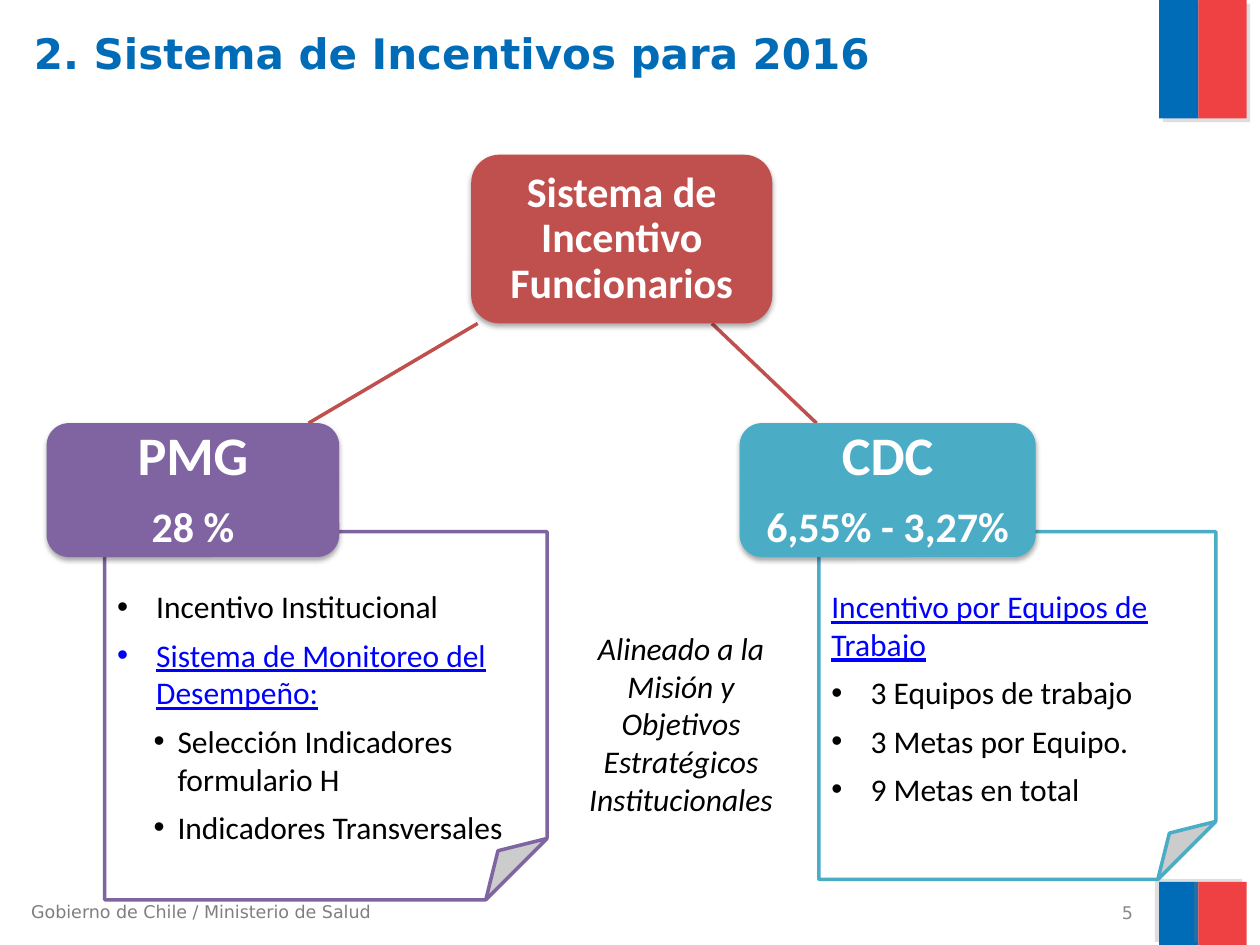
from dataclasses import dataclass

from lxml import etree
from pptx import Presentation
from pptx import util as u
from pptx.dml.color import RGBColor
from pptx.enum import shapes, text
from pptx.oxml.ns import qn


@dataclass(frozen=True)
class Theme:
    blue: str = "006CB7"
    red: str = "EF4144"
    brick: str = "C0504D"
    purple: str = "8064A2"
    teal: str = "4BACC6"
    link: str = "0000FF"
    black: str = "000000"
    white: str = "FFFFFF"
    footer: str = "7F7F7F"
    number: str = "898989"
    flag_shadow: str = "808080"
    heading_font: str = "DejaVu Sans"
    body_font: str = "Calibri"
    title_size: int = 24
    acronym_size: int = 31
    box_size: int = 24
    body_size: int = 18
    small_size: int = 10


@dataclass(frozen=True)
class Item:
    words: str
    indent: float = 0
    hanging: float = 0
    level: int = 0
    linked: bool = False


class SlideBuilder:
    def __init__(self, slide, theme):
        self.slide = slide
        self.theme = theme

    def place(self, shape, area):
        shape.left, shape.top, shape.width, shape.height = map(u.Cm, area)

    def font(self, paragraph, size, color, name=None, **styles):
        for run in paragraph.runs:
            run.font.size = u.Pt(size)
            run.font.name = name or self.theme.body_font
            run.font.color.rgb = RGBColor.from_string(color)
            for style, value in styles.items():
                setattr(run.font, style, value)

    def shape(self, kind, area, fill, line=None):
        shape = self.slide.shapes.add_shape(kind, *map(u.Cm, area))
        shape.fill.solid()
        shape.fill.fore_color.rgb = RGBColor.from_string(fill)
        if line:
            shape.line.color.rgb = RGBColor.from_string(line)
            shape.line.width = u.Pt(2)
        else:
            shape.line.fill.background()
        shape.shadow.inherit = False
        return shape

    def shadow(self, shape, color, opacity, blur, distance, angle):
        effects = shape._element.spPr.find(qn("a:effectLst"))
        outer = etree.SubElement(
            effects, qn("a:outerShdw"), blurRad=str(u.Pt(blur)),
            dist=str(u.Pt(distance)), dir=str(angle * 60000), rotWithShape="0")
        tint = etree.SubElement(outer, qn("a:srgbClr"), val=color)
        etree.SubElement(tint, qn("a:alpha"), val=str(opacity * 1000))

    def flag(self, top, height, angle):
        bands = ((23.37, 0.79, self.theme.blue), (24.16, 0.97, self.theme.red))
        for left, width, color in bands:
            band = self.shape(shapes.MSO_SHAPE.RECTANGLE, (left, top, width, height), color)
            self.shadow(band, self.theme.flag_shadow, 25, 0, 3, angle)

    def title(self, words):
        title = self.slide.shapes.title
        self.place(title, (0.43, 0.43, 22.68, 3.17))
        frame = title.text_frame
        frame.text = words
        frame.auto_size = text.MSO_AUTO_SIZE.NONE
        frame.vertical_anchor = text.MSO_ANCHOR.TOP
        frame.paragraphs[0].alignment = text.PP_ALIGN.LEFT
        self.font(frame.paragraphs[0], self.theme.title_size, self.theme.blue,
                  self.theme.heading_font, bold=True)

    def label(self, area, words, size, color, name=None,
              align=text.PP_ALIGN.LEFT, anchor=text.MSO_ANCHOR.TOP, **styles):
        frame = self.slide.shapes.add_textbox(*map(u.Cm, area)).text_frame
        frame.word_wrap = True
        frame.vertical_anchor = anchor
        frame.text = words
        frame.paragraphs[0].alignment = align
        self.font(frame.paragraphs[0], size, color, name, **styles)

    def box(self, area, color, lines):
        box = self.shape(shapes.MSO_SHAPE.ROUNDED_RECTANGLE, area, color)
        self.shadow(box, self.theme.black, 35, 3.1, 1.8, 90)
        frame = box.text_frame
        frame.word_wrap = True
        frame.vertical_anchor = text.MSO_ANCHOR.MIDDLE
        frame.margin_left = frame.margin_right = u.Cm(0.35)
        frame.margin_top = frame.margin_bottom = u.Cm(0.35)
        frame.text = "\n".join(words for words, size in lines)
        for paragraph, (words, size) in zip(frame.paragraphs, lines):
            paragraph.alignment = text.PP_ALIGN.CENTER
            paragraph.line_spacing = 0.9
            paragraph.space_after = u.Pt(size * 0.35)
            self.font(paragraph, size, self.theme.white, bold=True)

    def note(self, area, color, items):
        note = self.shape(shapes.MSO_SHAPE.FOLDED_CORNER, area, self.theme.white, color)
        frame = note.text_frame
        frame.word_wrap = True
        frame.vertical_anchor = text.MSO_ANCHOR.TOP
        frame.margin_top = u.Cm(1.12)
        frame.text = "\n".join(item.words for item in items)
        for paragraph, item in zip(frame.paragraphs, items):
            paragraph.alignment = text.PP_ALIGN.LEFT
            paragraph.level = item.level
            paragraph.space_after = u.Pt(6)
            self.bullet(paragraph, item)
            self.font(paragraph, self.theme.body_size,
                      self.theme.link if item.linked else self.theme.black,
                      underline=item.linked)

    def bullet(self, paragraph, item):
        properties = paragraph._p.get_or_add_pPr()
        properties.set("marL", str(u.Cm(item.indent)))
        properties.set("indent", str(-u.Cm(item.hanging)))
        if item.hanging:
            etree.SubElement(properties, qn("a:buFont"), typeface="Arial")
            etree.SubElement(properties, qn("a:buChar"), char="•")

    def connector(self, start, end, color):
        line = self.slide.shapes.add_connector(
            shapes.MSO_CONNECTOR.STRAIGHT, *map(u.Cm, start + end))
        line.line.color.rgb = RGBColor.from_string(color)
        line.line.width = u.Pt(2)
        etree.SubElement(line._element.spPr, qn("a:effectLst"))


def main():
    presentation = Presentation()
    presentation.slide_width, presentation.slide_height = u.Cm(25.4), u.Cm(19.05)
    theme = Theme()
    builder = SlideBuilder(presentation.slides.add_slide(presentation.slide_layouts[5]), theme)

    builder.flag(0, 2.39, 45)
    builder.flag(17.78, 1.27, 215)
    builder.title("2. Sistema de Incentivos para 2016")
    builder.label((0.38, 18.03, 7.67, 0.69), "Gobierno de Chile / Ministerio de Salud",
                  theme.small_size, theme.footer, theme.heading_font)
    builder.label((17.17, 18.14, 5.92, 0.53), "5", theme.small_size, theme.number,
                  theme.heading_font, text.PP_ALIGN.RIGHT, text.MSO_ANCHOR.MIDDLE)

    first, second = (0.79, 0.79), (1.22, 0.48, 1)
    builder.note((16.51, 10.72, 8, 7.01), theme.teal, [
        Item("Incentivo por Equipos de Trabajo", linked=True),
        Item("3 Equipos de trabajo", *first),
        Item("3 Metas por Equipo.", *first),
        Item("9 Metas en total", *first),
    ])
    builder.note((2.11, 10.72, 8.92, 7.42), theme.purple, [
        Item("Incentivo Institucional", *first),
        Item("Sistema de Monitoreo del Desempeño:", *first, linked=True),
        Item("Selección Indicadores formulario H", *second),
        Item("Indicadores Transversales", *second),
    ])

    builder.connector((14.35, 6.52), (16.46, 8.53), theme.brick)
    builder.connector((9.63, 6.52), (6.22, 8.53), theme.brick)
    builder.box((9.5, 3.12, 6.07, 3.4), theme.brick,
                [("Sistema de Incentivo Funcionarios", theme.box_size)])
    builder.box((14.91, 8.53, 5.97, 2.7), theme.teal,
                [("CDC", theme.acronym_size), ("6,55% - 3,27%", theme.box_size)])
    builder.box((0.94, 8.53, 5.9, 2.7), theme.purple,
                [("PMG", theme.acronym_size), ("28 %", theme.box_size)])
    builder.label((11.43, 12.55, 4.6, 4.11),
                  "Alineado a la Misión y Objetivos Estratégicos Institucionales",
                  theme.body_size, theme.black, align=text.PP_ALIGN.CENTER, italic=True)

    presentation.save("out.pptx")


if __name__ == "__main__":
    main()
